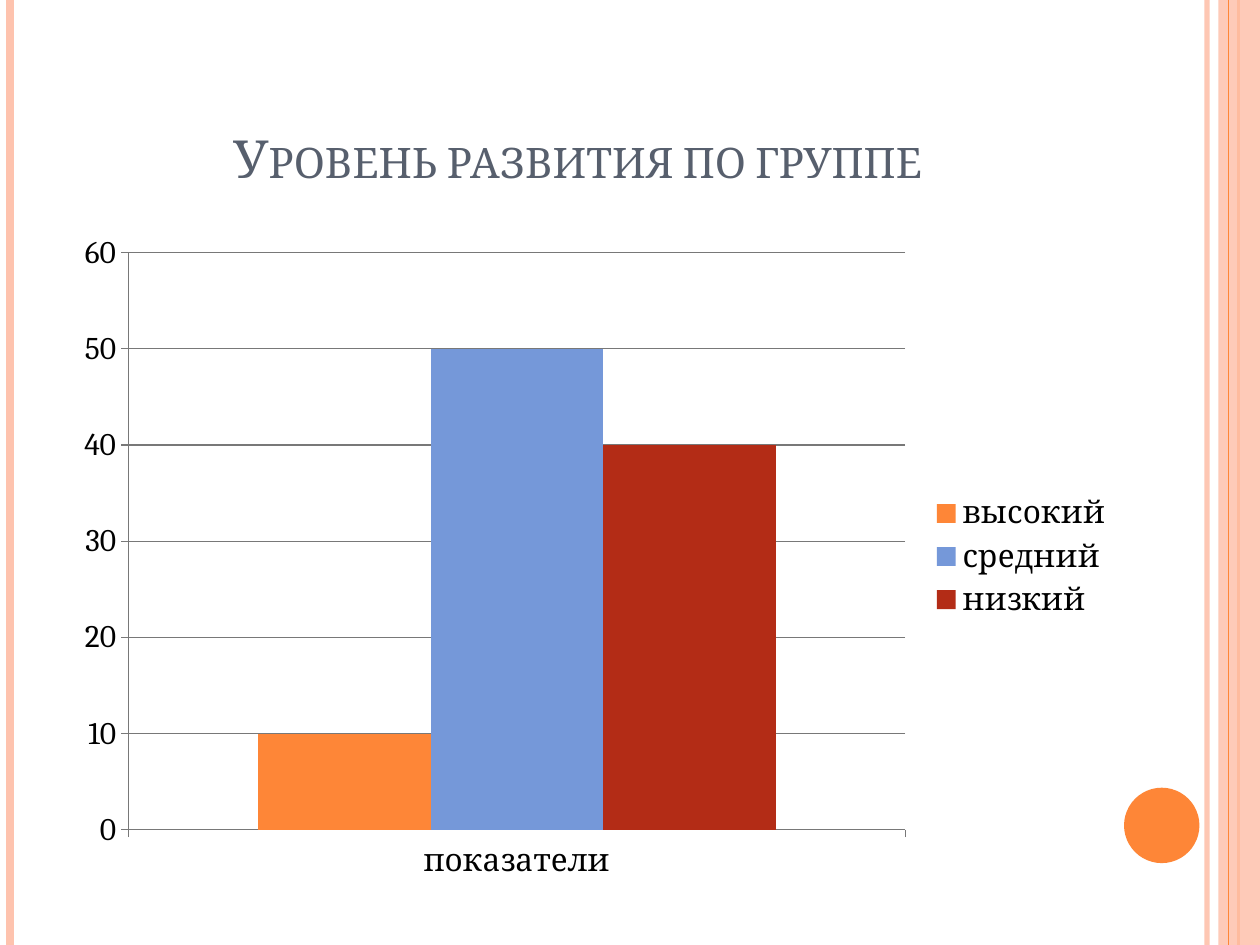
import pptx
import pptx.util
import pptx.chart.data
import pptx.dml.color
import pptx.enum.chart
import pptx.enum.shapes
import pptx.enum.text
import pptx.oxml
import pptx.oxml.ns

Cm = pptx.util.Cm
Pt = pptx.util.Pt
RGB = pptx.dml.color.RGBColor
KIND = pptx.enum.shapes.MSO_SHAPE
CHART = pptx.enum.chart
qn = pptx.oxml.ns.qn

# Content
TITLE = "Уровень развития по группе"
CATS = ["показатели"]

# Colours and font
ORANGE = RGB(0xFE, 0x86, 0x37)
PEACH = RGB(0xFE, 0xC3, 0xAE)
BLUE = RGB(0x75, 0x98, 0xD9)
RED = RGB(0xB3, 0x2C, 0x16)
SLATE = RGB(0x57, 0x5F, 0x6D)
GREY = RGB(0x78, 0x78, 0x78)
BLACK = RGB(0, 0, 0)
FACE = "Cambria"

SERIES = [("высокий", 10, ORANGE), ("средний", 50, BLUE), ("низкий", 40, RED)]

# Sizes in cm; lines are x, colour, points, opacity in percent
WIDE, HIGH = 25.4, 19.05
BACK = [(24.33, PEACH, 3, 93), (0.2, PEACH, 4.5, 100), (24.97, ORANGE, 1.5, 100)]
FRONT = [(24.77, ORANGE, 0.75, 100)]
BAND = (24.56, 0, 0.84, HIGH)
DISC = (22.66, 15.88, 1.52, 1.52)
HEAD = (1.27, 0.76, 20.75, 3.18)
PLOT = (1.27, 4.45, 21.44, 13.54)

TEXT = {"name": FACE, "size": Pt(18), "bold": False}
CAPTION = {"name": FACE, "size": Pt(30), "bold": False}


def style(font, form, tint):
    for key, val in form.items():
        setattr(font, key, val)
    font.color.rgb = tint


def fade(node, rate):
    if rate < 100:
        tint = next(node.iter(qn("a:srgbClr")))
        tint.append(pptx.oxml.parse_xml(
            f'<a:alpha {pptx.oxml.ns.nsdecls("a")} val="{rate * 1000}"/>'))


def rule(shapes, x, tint, width, rate):
    line = shapes.add_connector(
        pptx.enum.shapes.MSO_CONNECTOR.STRAIGHT, Cm(x), 0, Cm(x), Cm(HIGH))
    line.line.color.rgb = tint
    line.line.width = Pt(width)
    props = line._element.spPr
    fade(props, rate)
    props.append(pptx.oxml.parse_xml(
        f'<a:effectLst {pptx.oxml.ns.nsdecls("a")}/>'))


def block(shapes, kind, box, tint, rate=100):
    shape = shapes.add_shape(kind, *map(Cm, box))
    shape.shadow.inherit = False
    shape.fill.solid()
    shape.fill.fore_color.rgb = tint
    shape.line.fill.background()
    fade(shape._element.spPr, rate)


def draw_title(title):
    for key, val in zip(("left", "top", "width", "height"), HEAD):
        setattr(title, key, Cm(val))
    frame = title.text_frame
    frame.text = TITLE
    frame.vertical_anchor = pptx.enum.text.MSO_ANCHOR.BOTTOM
    par = frame.paragraphs[0]
    par.alignment = pptx.enum.text.PP_ALIGN.CENTER
    run = par.runs[0]
    style(run.font, CAPTION, SLATE)
    run.font._element.set("cap", "small")


def draw_chart(shapes):
    data = pptx.chart.data.CategoryChartData()
    data.categories = CATS
    for name, val, _ in SERIES:
        data.add_series(name, [val])
    chart = shapes.add_chart(
        CHART.XL_CHART_TYPE.COLUMN_CLUSTERED, *map(Cm, PLOT), data).chart
    chart.has_title = False
    style(chart.font, TEXT, BLACK)

    # Legend
    chart.has_legend = True
    chart.legend.position = CHART.XL_LEGEND_POSITION.RIGHT
    chart.legend.include_in_layout = False

    # Columns
    plot = chart.plots[0]
    plot.vary_by_categories = False
    plot.gap_width = 150
    plot.overlap = 0
    for bar, (_, _, tint) in zip(plot.series, SERIES):
        bar.format.fill.solid()
        bar.format.fill.fore_color.rgb = tint

    # Axes
    scale = chart.value_axis
    form = {"minimum_scale": 0, "maximum_scale": 60, "major_unit": 10,
            "has_major_gridlines": True}
    for key, val in form.items():
        setattr(scale, key, val)
    for axis in (chart.category_axis, scale):
        axis.major_tick_mark = CHART.XL_TICK_MARK.OUTSIDE
        axis.format.line.color.rgb = GREY
        axis.format.line.width = Pt(0.75)
    grid = scale.major_gridlines.format.line
    grid.color.rgb = GREY
    grid.width = Pt(0.75)


def main():
    deck = pptx.Presentation()
    deck.slide_width, deck.slide_height = Cm(WIDE), Cm(HIGH)
    slide = deck.slides.add_slide(deck.slide_layouts[5])
    shapes = slide.shapes

    # Side stripes and disc
    for item in BACK:
        rule(shapes, *item)
    block(shapes, KIND.RECTANGLE, BAND, PEACH, 87)
    for item in FRONT:
        rule(shapes, *item)
    block(shapes, KIND.OVAL, DISC, ORANGE)

    # Title and chart
    draw_title(shapes.title)
    draw_chart(shapes)
    deck.save("out.pptx")


if __name__ == "__main__":
    main()
